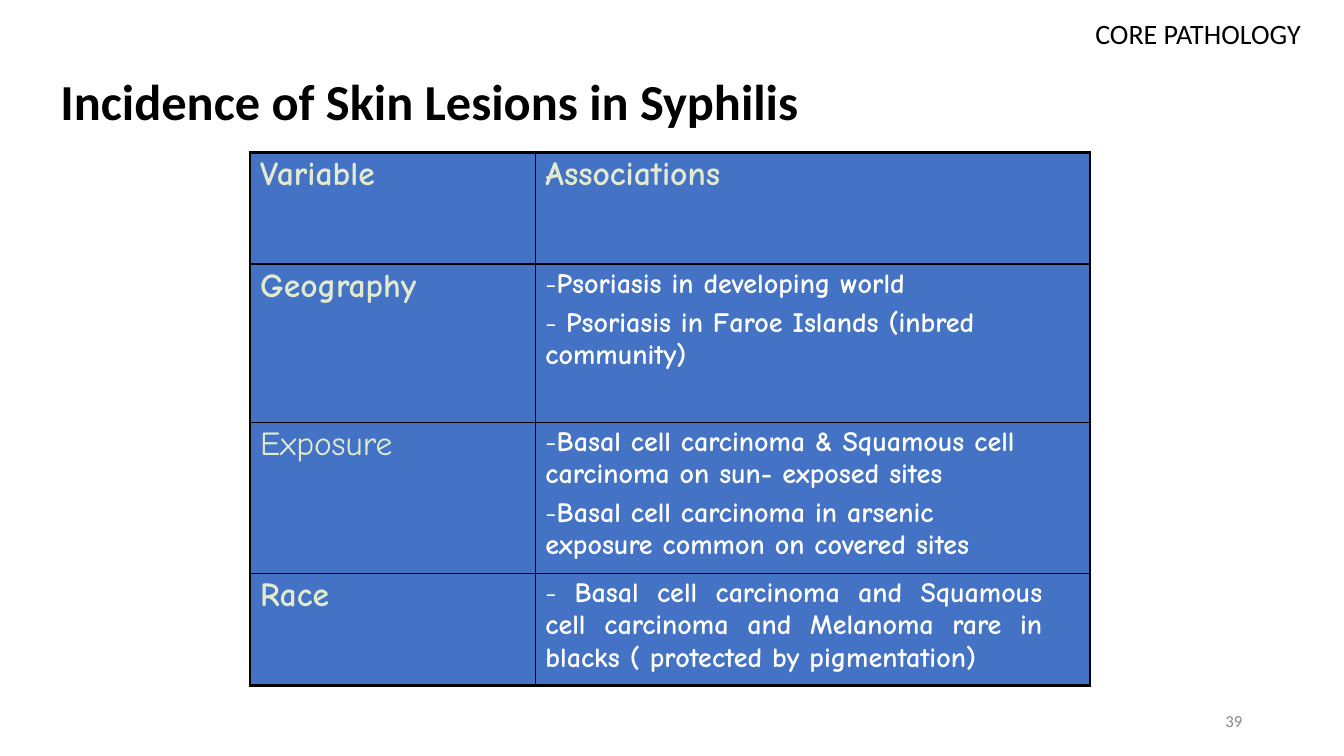
from lxml import etree
from pptx import Presentation
from pptx.dml.color import RGBColor
from pptx.enum import text
from pptx.oxml import ns
from pptx.util import Inches, Pt

BLACK = RGBColor(0x00, 0x00, 0x00)
WHITE = RGBColor(0xFF, 0xFF, 0xFF)
GRAY = RGBColor(0x88, 0x88, 0x88)
BLUE = RGBColor(0x44, 0x72, 0xC4)
PALE_GREEN = RGBColor(0xE2, 0xEA, 0xCF)

BODY_FONT = "Calibri"
TABLE_FONT = "Comic Neue"
OUTER, INNER = 2.25, 1
LEFT, RIGHT, JUSTIFY = text.PP_ALIGN.LEFT, text.PP_ALIGN.RIGHT, text.PP_ALIGN.JUSTIFY

COLUMN_WIDTHS = [2.83, 5.5]
ROW_HEIGHTS = [1.11, 1.57, 1.5, 1.11]

# Each row: label, label is bold, associations, right margin, alignment
ROWS = [
    ("Geography", True, [
        ("-", "Psoriasis in developing world"),
        ("- ", "Psoriasis in Faroe Islands (inbred community)"),
    ], 0.47, LEFT),
    ("Exposure", False, [
        ("-", "Basal cell carcinoma & Squamous cell"),
        ("", "carcinoma on sun- exposed sites"),
        ("-", "Basal cell carcinoma in arsenic exposure common on covered sites"),
    ], 0.6, LEFT),
    ("Race", True, [
        ("- ", "Basal cell carcinoma and Squamous cell carcinoma and Melanoma "
               "rare in blacks ( protected by pigmentation)"),
    ], 0.47, JUSTIFY),
]


def add_run(paragraph, content, *, size, color, font=BODY_FONT, bold=False):
    run = paragraph.add_run()
    run.text = content
    run.font.name = font
    run.font.size = Pt(size)
    run.font.bold = bold
    run.font.color.rgb = color


def place(shape, left, top, width, height):
    shape.left, shape.top = Inches(left), Inches(top)
    shape.width, shape.height = Inches(width), Inches(height)


def add_title(slide, content):
    title = slide.shapes.title
    place(title, 0.5, 0.23, 12.42, 1.45)
    frame = title.text_frame
    frame.auto_size = text.MSO_AUTO_SIZE.NONE
    frame.vertical_anchor = text.MSO_ANCHOR.MIDDLE
    paragraph = frame.paragraphs[0]
    paragraph.alignment = LEFT
    paragraph.line_spacing = 1.15
    paragraph.space_after = Pt(15)
    add_run(paragraph, content, size=36, color=BLACK, bold=True)


def add_label(slide, content, box, *, size, color, margin, anchor):
    label = slide.shapes.add_textbox(*(Inches(value) for value in box))
    frame = label.text_frame
    frame.word_wrap = True
    frame.vertical_anchor = anchor
    frame.margin_top = frame.margin_bottom = Inches(margin)
    paragraph = frame.paragraphs[0]
    paragraph.alignment = RIGHT
    add_run(paragraph, content, size=size, color=color)


def set_borders(cell, widths):
    properties = cell._tc.get_or_add_tcPr()
    for side, width in zip("LRTB", widths):
        line = etree.SubElement(properties, ns.qn(f"a:ln{side}"), w=str(Pt(width)))
        fill = etree.SubElement(line, ns.qn("a:solidFill"))
        etree.SubElement(fill, ns.qn("a:srgbClr"), val=str(BLACK))


def format_cell(cell, row, column):
    last_row, last_column = len(ROW_HEIGHTS) - 1, len(COLUMN_WIDTHS) - 1
    on_edge = (column == 0, column == last_column, row == 0, row == last_row)
    set_borders(cell, [OUTER if edge else INNER for edge in on_edge])
    cell.fill.solid()
    cell.fill.fore_color.rgb = BLUE
    cell.margin_left = Inches(0.1)
    cell.margin_top = Inches(0.03)
    cell.margin_right = cell.margin_bottom = 0


def fill_heading(cell, content, bold=True):
    add_run(cell.text_frame.paragraphs[0], content, size=24,
            color=PALE_GREEN, font=TABLE_FONT, bold=bold)


def fill_associations(cell, items, right_margin, alignment):
    cell.margin_top = Inches(0.04)
    cell.margin_right = Inches(right_margin)
    frame = cell.text_frame
    for index, (dash, content) in enumerate(items):
        paragraph = frame.add_paragraph() if index else frame.paragraphs[0]
        paragraph.alignment = alignment
        if dash:
            if index:
                paragraph.space_before = Pt(4.8)
            add_run(paragraph, dash, size=20, color=WHITE, font=TABLE_FONT)
        add_run(paragraph, content, size=20, color=WHITE, font=TABLE_FONT, bold=True)


def add_lesion_table(slide):
    table = slide.shapes.add_table(
        len(ROW_HEIGHTS), len(COLUMN_WIDTHS), Inches(2.48), Inches(1.51),
        Inches(sum(COLUMN_WIDTHS)), Inches(sum(ROW_HEIGHTS))).table
    for column, width in zip(table.columns, COLUMN_WIDTHS):
        column.width = Inches(width)
    for row, height in enumerate(ROW_HEIGHTS):
        table.rows[row].height = Inches(height)
        for column in range(len(COLUMN_WIDTHS)):
            format_cell(table.cell(row, column), row, column)

    # Header row, then one row per variable
    for column, heading in enumerate(["Variable", "Associations"]):
        fill_heading(table.cell(0, column), heading)
    for row, (label, bold, items, margin, alignment) in enumerate(ROWS, start=1):
        fill_heading(table.cell(row, 0), label, bold)
        fill_associations(table.cell(row, 1), items, margin, alignment)


def main():
    presentation = Presentation()
    presentation.slide_width = Inches(13.33)
    presentation.slide_height = Inches(7.5)
    slide = presentation.slides.add_slide(presentation.slide_layouts[5])

    # Title, course label and page number
    add_title(slide, "Incidence of Skin Lesions in Syphilis")
    add_label(slide, "CORE PATHOLOGY", (9.53, 0.06, 3.47, 0.45), size=20,
              color=BLACK, margin=0.1, anchor=text.MSO_ANCHOR.TOP)
    add_label(slide, "39", (9.42, 6.95, 3, 0.4), size=12,
              color=GRAY, margin=0.05, anchor=text.MSO_ANCHOR.MIDDLE)

    # Table of variables and associations
    add_lesion_table(slide)
    presentation.save("out.pptx")


if __name__ == "__main__":
    main()
